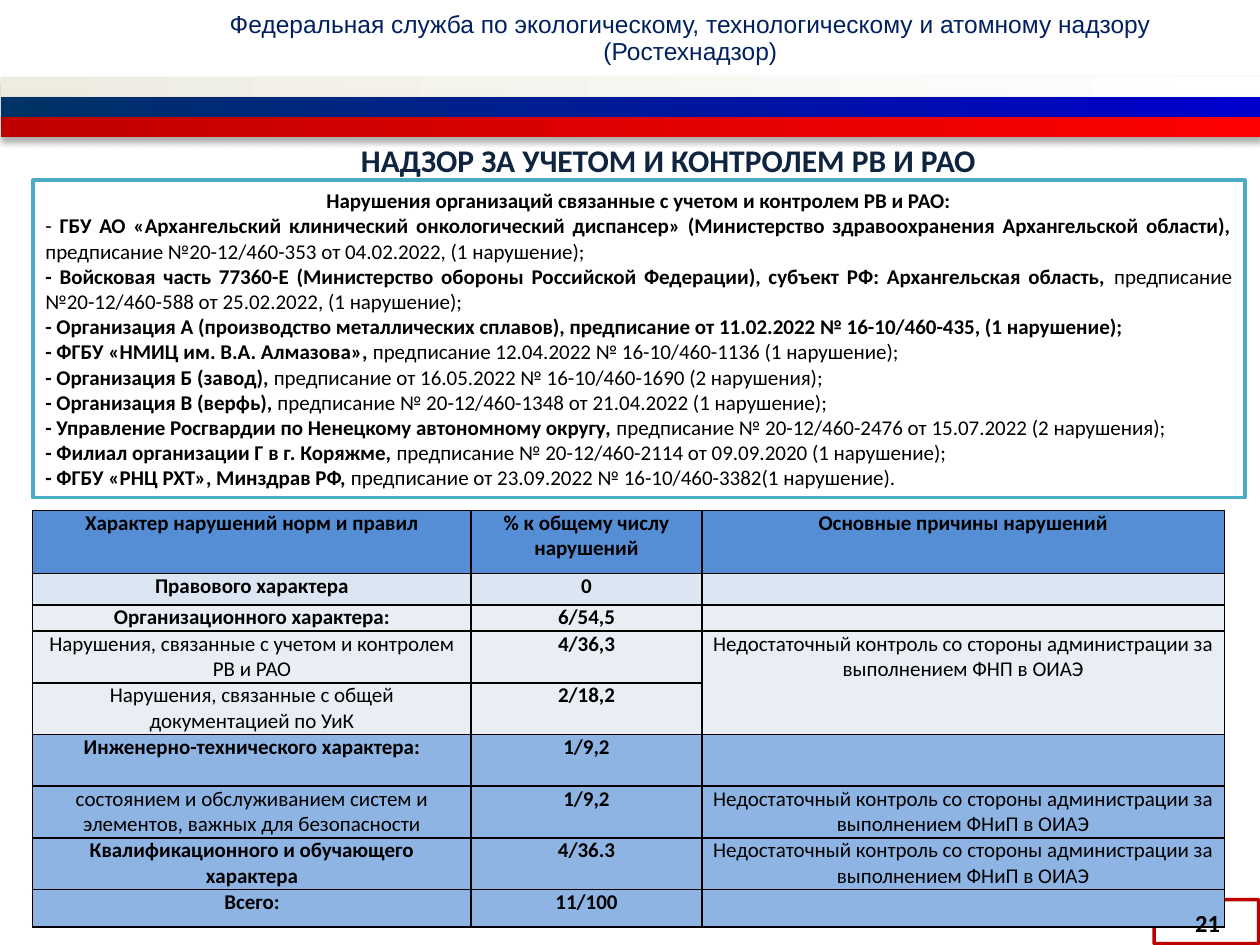
from lxml import etree
from pptx import Presentation
from pptx.dml.color import RGBColor
from pptx.enum.shapes import MSO_SHAPE as Shape
from pptx.enum.text import MSO_ANCHOR as Anchor, PP_ALIGN as Align, MSO_AUTO_SIZE as AutoSize
from pptx.oxml.ns import qn
from pptx.util import Inches, Pt

COLORS = {
    "black": "000000", "white": "FFFFFF", "header": "002060", "title": "0F243E",
    "frame": "4BACC6", "page": "C00000", "head_row": "558ED5",
    "legal": "DCE6F2", "organizational": "E9EDF4", "technical": "8EB4E3",
}
BANDS = [("EEECE1", "FFFFFF"), ("003366", "0000CC"), ("C00000", "FF0000")]

HEADER = ["Федеральная служба по экологическому, технологическому и атомному надзору",
          "(Ростехнадзор)"]
TITLE = "НАДЗОР ЗА УЧЕТОМ И КОНТРОЛЕМ РВ И РАО"
PAGE_NUMBER = "21"

# Each paragraph is a list of (text, bold) runs.
VIOLATIONS = [
    [("Нарушения организаций связанные с учетом и контролем РВ и РАО:", True)],
    [("- ", False),
     ("ГБУ АО «Архангельский клинический онкологический диспансер» "
      "(Министерство здравоохранения Архангельской области), ", True),
     ("предписание №20-12/460-353 от 04.02.2022, (1 нарушение);", False)],
    [("- Войсковая часть 77360-Е (Министерство обороны Российской Федерации), "
      "субъект РФ: Архангельская область, ", True),
     ("предписание №20-12/460-588 от 25.02.2022, (1 нарушение);", False)],
    [("- Организация А (производство металлических сплавов), "
      "предписание от 11.02.2022 № 16-10/460-435, (1 нарушение);", True)],
    [("- ФГБУ «НМИЦ им. В.А. Алмазова», ", True),
     ("предписание 12.04.2022 № 16-10/460-1136 (1 нарушение);", False)],
    [("- Организация Б (завод), ", True),
     ("предписание от 16.05.2022 № 16-10/460-1690 (2 нарушения);", False)],
    [("- Организация В (верфь), ", True),
     ("предписание № 20-12/460-1348 от 21.04.2022 (1 нарушение);", False)],
    [("- Управление Росгвардии по Ненецкому автономному округу, ", True),
     ("предписание № 20-12/460-2476 от 15.07.2022 (2 нарушения);", False)],
    [("- Филиал организации Г в г. Коряжме, ", True),
     ("предписание № 20-12/460-2114 от 09.09.2020 (1 нарушение);", False)],
    [("- ФГБУ «РНЦ РХТ», Минздрав РФ, ", True),
     ("предписание от 23.09.2022 № 16-10/460-3382(1 нарушение).", False)],
]

COLUMN_WIDTHS = [3.48, 1.83, 4.15]
CAUSE = "Недостаточный контроль со стороны администрации за выполнением {} в ОИАЭ"
# Row height, fill, whether the first cell is bold, cell texts.
ROWS = [
    (0.5, "head_row", True, ["Характер нарушений норм и правил",
                             "% к общему числу нарушений", "Основные причины нарушений"]),
    (0.25, "legal", True, ["Правового характера", "0", ""]),
    (0.21, "organizational", True, ["Организационного характера:", "6/54,5", ""]),
    (0.41, "organizational", False, ["Нарушения, связанные с учетом и контролем РВ и РАО",
                                     "4/36,3", CAUSE.format("ФНП")]),
    (0.41, "organizational", False, ["Нарушения, связанные с общей документацией по УиК",
                                     "2/18,2", ""]),
    (0.41, "technical", True, ["Инженерно-технического характера:", "1/9,2", ""]),
    (0.41, "technical", False, ["состоянием и обслуживанием систем и элементов, "
                                "важных для безопасности", "1/9,2", CAUSE.format("ФНиП")]),
    (0.41, "technical", True, ["Квалификационного и обучающего характера",
                               "4/36.3", CAUSE.format("ФНиП")]),
    (0.3, "technical", True, ["Всего:", "11/100", ""]),
]
MERGED_CAUSE_ROWS = (3, 4)


def rgb(name):
    return RGBColor.from_string(COLORS[name])


def place(shape, left, top, width, height):
    shape.left, shape.top = Inches(left), Inches(top)
    shape.width, shape.height = Inches(width), Inches(height)


def style(paragraph, size, color="black", bold=None, name="Calibri", align=Align.CENTER):
    paragraph.alignment = align
    font = paragraph.font
    font.size, font.name, font.bold = Pt(size), name, bold
    font.color.rgb = rgb(color)


def add_band_shadow(shape):
    effects = etree.SubElement(shape._element.spPr, qn("a:effectLst"))
    shadow = etree.SubElement(effects, qn("a:outerShdw"), blurRad=str(Pt(3.5)),
                              dist=str(Pt(2.2)), dir="5400000", rotWithShape="0")
    color = etree.SubElement(shadow, qn("a:srgbClr"), val=COLORS["black"])
    etree.SubElement(color, qn("a:alpha"), val="32000")


def add_borders(cell):
    properties = cell._tc.get_or_add_tcPr()
    for side in ("lnL", "lnR", "lnT", "lnB"):
        line = etree.SubElement(properties, qn("a:" + side), w=str(Pt(1)))
        fill = etree.SubElement(line, qn("a:solidFill"))
        etree.SubElement(fill, qn("a:srgbClr"), val=COLORS["black"])


def add_bands(slide):
    height = 0.16
    for index, gradient in enumerate(BANDS):
        band = slide.shapes.add_shape(Shape.RECTANGLE, Inches(0.01),
                                      Inches(0.61 + index * height),
                                      Inches(9.99), Inches(height))
        band.line.fill.background()
        band.fill.gradient()
        band.fill.gradient_angle = 0
        for stop, color, position in zip(band.fill.gradient_stops, gradient, (0, 1)):
            stop.color.rgb = RGBColor.from_string(color)
            stop.position = position
        add_band_shadow(band)


def add_header(slide):
    box = slide.shapes.add_textbox(Inches(0.98), Inches(0.1), Inches(9), Inches(0.43))
    frame = box.text_frame
    frame.word_wrap = True
    frame.margin_top = frame.margin_bottom = 0
    frame.text = "\n".join(HEADER)
    for paragraph in frame.paragraphs:
        paragraph.line_spacing = Pt(15)
        style(paragraph, 14, "header", name="Arial")


def fill_title(title):
    place(title, 2.24, 1.07, 6.13, 0.4)
    frame = title.text_frame
    frame.text = TITLE
    frame.vertical_anchor = Anchor.TOP
    frame.auto_size = AutoSize.NONE
    style(frame.paragraphs[0], 18, "title", True)


def fill_violations(body):
    place(body, 0.26, 1.43, 9.62, 2.52)
    body.fill.solid()
    body.fill.fore_color.rgb = rgb("white")
    body.line.color.rgb = rgb("frame")
    body.line.width = Pt(2)
    frame = body.text_frame
    frame.auto_size = AutoSize.NONE
    frame.vertical_anchor = Anchor.MIDDLE
    for index, runs in enumerate(VIOLATIONS):
        paragraph = frame.add_paragraph() if index else frame.paragraphs[0]
        paragraph.space_before = Pt(0)
        properties = paragraph._p.get_or_add_pPr()
        properties.set("marL", "0")
        properties.set("indent", "0")
        etree.SubElement(properties, qn("a:buNone"))
        style(paragraph, 12, align=Align.JUSTIFY if index else Align.CENTER)
        for text, bold in runs:
            run = paragraph.add_run()
            run.text, run.font.bold = text, bold


def add_page_frame(slide):
    frame = slide.shapes.add_shape(Shape.ROUND_1_RECTANGLE, Inches(9.4), Inches(6.9),
                                   Inches(0.35), Inches(0.83))
    frame.adjustments[0] = 0.5
    frame.rotation = 270
    frame.shadow.inherit = False
    frame.fill.background()
    frame.line.color.rgb = rgb("page")
    frame.line.width = Pt(2)


def add_violation_table(slide):
    table = slide.shapes.add_table(
        len(ROWS), len(COLUMN_WIDTHS), Inches(0.26), Inches(4.05),
        Inches(sum(COLUMN_WIDTHS)), Inches(sum(row[0] for row in ROWS))).table
    table.first_row = table.horz_banding = False
    for column, width in zip(table.columns, COLUMN_WIDTHS):
        column.width = Inches(width)
    for row_index, (height, fill, bold_name, texts) in enumerate(ROWS):
        table.rows[row_index].height = Inches(height)
        bolds = (bold_name, True, row_index == 0)
        for column_index, (text, bold) in enumerate(zip(texts, bolds)):
            cell = table.cell(row_index, column_index)
            cell.margin_left = cell.margin_right = Inches(0.07)
            cell.margin_top = cell.margin_bottom = 0
            add_borders(cell)
            cell.fill.solid()
            cell.fill.fore_color.rgb = rgb(fill)
            cell.text = text
            paragraph = cell.text_frame.paragraphs[0]
            style(paragraph, 12, bold=bold)
            if not text:
                etree.SubElement(paragraph._p, qn("a:endParaRPr"), sz="1200")
    first, last = MERGED_CAUSE_ROWS
    table.cell(first, 2).merge(table.cell(last, 2))


def add_page_number(slide):
    box = slide.shapes.add_textbox(Inches(9.17), Inches(7.14), Inches(0.83), Inches(0.36))
    box.text_frame.word_wrap = True
    box.text_frame.vertical_anchor = Anchor.MIDDLE
    box.text_frame.text = PAGE_NUMBER
    style(box.text_frame.paragraphs[0], 14, bold=True)


def main():
    presentation = Presentation()
    presentation.slide_width, presentation.slide_height = Inches(10), Inches(7.5)
    slide = presentation.slides.add_slide(presentation.slide_layouts[1])
    add_header(slide)
    add_bands(slide)
    add_page_frame(slide)
    add_violation_table(slide)
    fill_violations(slide.placeholders[1])
    add_page_number(slide)
    fill_title(slide.shapes.title)
    presentation.save("out.pptx")


if __name__ == "__main__":
    main()
